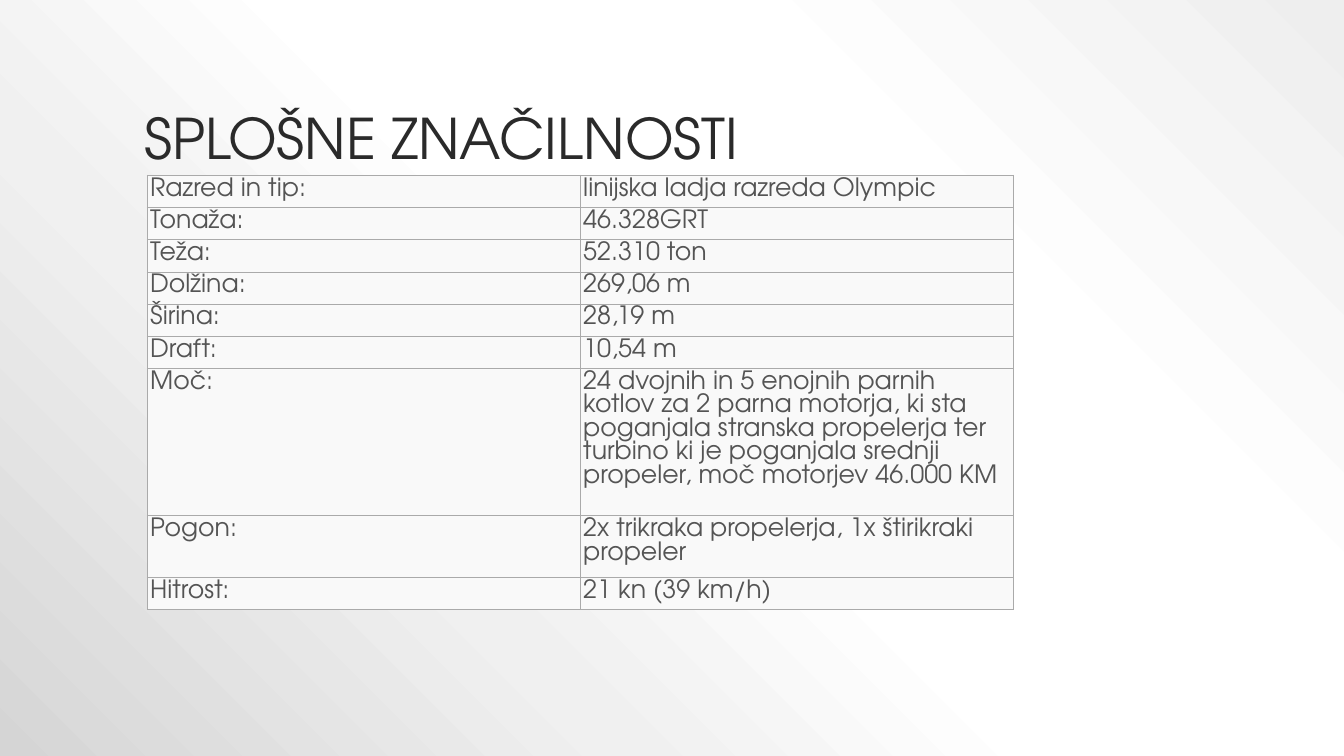
import pptx
import pptx.util
import pptx.dml.color
import pptx.enum.text
import pptx.oxml
from pptx.oxml.ns import qn
from pptx.util import Inches

FONT = "TeX Gyre Adventor"
COLORS = {"title": "2A2A2A", "text": "545454", "cell": "F9F9F9",
          "border": "AAAAAA"}
BACKDROP_STOPS = [(0, "D5D5D5"), (30, "F0F0F0"), (50, "FFFFFF"),
                  (70, "FFFFFF"), (100, "EEEEEE")]
# Label, value, row height in inches
FEATURES = [
    ("Razred in tip:", "linijska ladja razreda Olympic", 0.32),
    ("Tonaža:", "46.328GRT", 0.32),
    ("Teža:", "52.310 ton", 0.32),
    ("Dolžina:", "269,06 m", 0.32),
    ("Širina:", "28,19 m", 0.32),
    ("Draft:", "10,54 m", 0.32),
    ("Moč:", "24 dvojnih in 5 enojnih parnih kotlov za 2 parna motorja, "
             "ki sta poganjala stranska propelerja ter turbino ki je poganjala "
             "srednji propeler, moč motorjev 46.000 KM", 1.46),
    ("Pogon:", "2x trikraka propelerja, 1x štirikraki propeler", 0.61),
    ("Hitrost:", "21 kn (39 km/h)", 0.32),
]


def rgb(name):
    return pptx.dml.color.RGBColor.from_string(COLORS[name])


def write_text(frame, text, size, color, spacing):
    paragraph = frame.paragraphs[0]
    paragraph.alignment = pptx.enum.text.PP_ALIGN.LEFT
    paragraph.line_spacing = spacing
    run = paragraph.add_run()
    run.text = text
    run.font.name = FONT
    run.font.size = pptx.util.Pt(size)
    run.font.color.rgb = rgb(color)


def paint_backdrop(slide):
    fill = slide.background.fill
    fill.gradient()
    fill.gradient_angle = 45
    stops = slide.background._cSld.find(".//" + qn("a:gsLst"))
    for stop in list(stops):
        stops.remove(stop)
    for percent, color in BACKDROP_STOPS:
        stops.append(pptx.oxml.parse_xml(
            '<a:gs xmlns:a="http://schemas.openxmlformats.org/drawingml/2006/main" '
            f'pos="{percent * 1000}"><a:srgbClr val="{color}"/></a:gs>'))


def add_title(slide, text):
    title = slide.shapes.title
    title.left, title.top = Inches(1.33), Inches(0.3)
    title.width, title.height = Inches(10.67), Inches(1.45)
    title.text_frame.word_wrap = True
    title.text_frame.vertical_anchor = pptx.enum.text.MSO_ANCHOR.BOTTOM
    write_text(title.text_frame, text, size=40, color="title", spacing=0.9)


def set_borders(cell):
    properties = cell._tc.get_or_add_tcPr()
    for position, side in enumerate(("lnL", "lnR", "lnT", "lnB")):
        properties.insert(position, pptx.oxml.parse_xml(
            f'<a:{side} xmlns:a="http://schemas.openxmlformats.org/drawingml/2006/main" '
            f'w="9525"><a:solidFill><a:srgbClr val="{COLORS["border"]}"/>'
            f'</a:solidFill></a:{side}>'))


def format_cell(cell, text):
    cell.margin_left = cell.margin_right = Inches(0.03)
    cell.margin_top = cell.margin_bottom = Inches(0.02)
    cell.fill.solid()
    cell.fill.fore_color.rgb = rgb("cell")
    set_borders(cell)
    write_text(cell.text_frame, text, size=18, color="text", spacing=1.0)


def add_features(slide):
    height_sum = sum(height for _, _, height in FEATURES)
    features = slide.shapes.add_table(
        len(FEATURES), 2, Inches(1.46), Inches(1.74),
        Inches(8.59), Inches(height_sum)).table
    features.first_row = features.horz_banding = False
    for row, (label, value, height) in enumerate(FEATURES):
        features.rows[row].height = Inches(height)
        format_cell(features.cell(row, 0), label)
        format_cell(features.cell(row, 1), value)


def main():
    deck = pptx.Presentation()
    deck.slide_width, deck.slide_height = Inches(13.33), Inches(7.5)
    slide = deck.slides.add_slide(deck.slide_layouts[5])
    # Backdrop
    paint_backdrop(slide)
    # Content
    add_title(slide, "SPLOŠNE ZNAČILNOSTI")
    add_features(slide)
    deck.save("out.pptx")


if __name__ == "__main__":
    main()
